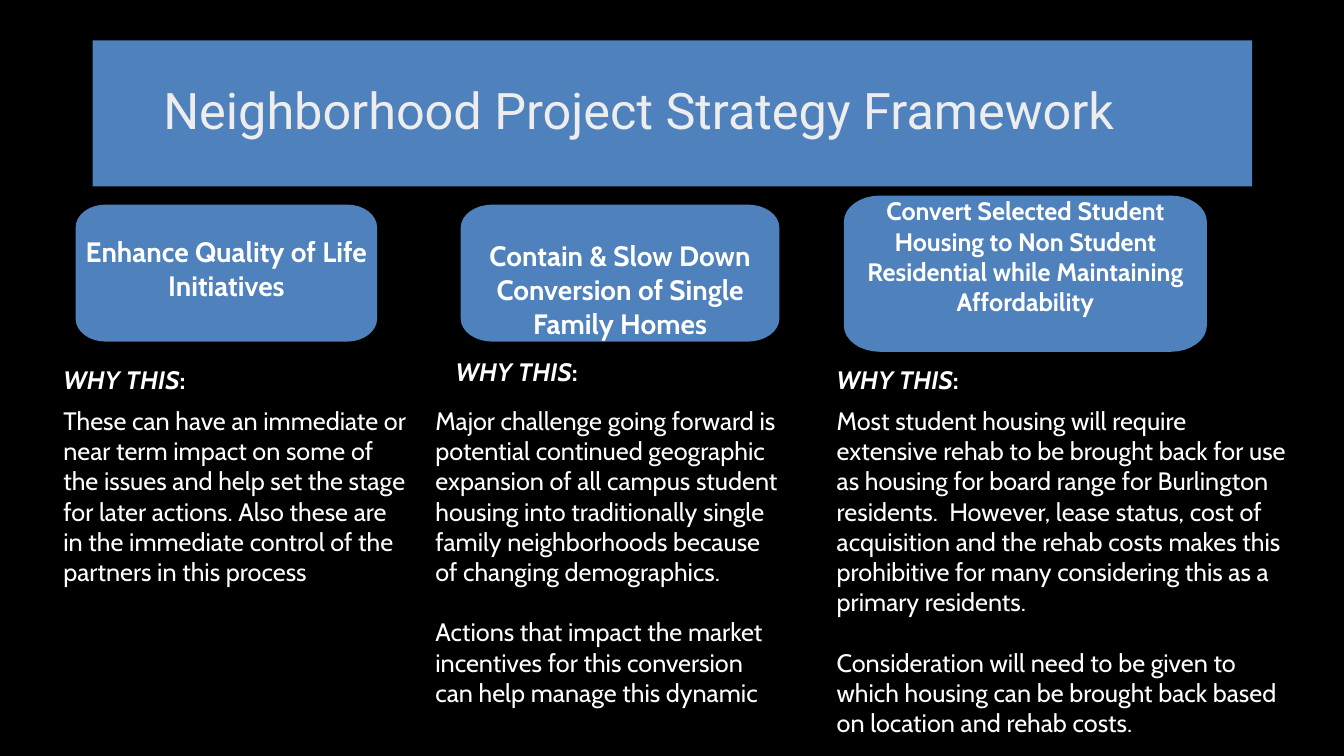
from dataclasses import dataclass
from math import cos, pi, sin

from pptx import Presentation
from pptx.dml.color import RGBColor
from pptx.enum.shapes import MSO_SHAPE
from pptx.enum.text import MSO_ANCHOR, PP_ALIGN
from pptx.shapes.autoshape import Shape
from pptx.slide import Slide
from pptx.text.text import TextFrame, _Paragraph
from pptx.util import Inches, Pt

BLUE, WHITE, BLACK, TITLE_GREY = "4F81BC", "FFFFFF", "000000", "EDEDED"
BODY_SIZE = 18
BODY_TOP = 3.97
PARAGRAPH_GAP = 21.6  # one body line


@dataclass
class Box:
    left: float
    top: float
    width: float
    height: float


@dataclass
class Strategy:
    heading: str
    heading_box: Box
    heading_size: float
    heading_inset: float
    why_box: Box
    reasons: list[str]
    reasons_box: Box


STRATEGIES = [
    Strategy(
        "Enhance Quality of Life Initiatives",
        Box(0.75, 2.03, 2.99, 1.36), 20, 0.3,
        Box(0.53, 3.57, 3.21, 0.4),
        ["These can have an immediate or near term impact on some of the issues and help "
         "set the stage for later actions. Also these are in the immediate control of the "
         "partners in this process"],
        Box(0.53, BODY_TOP, 3.61, 1.92),
    ),
    Strategy(
        "Contain & Slow Down Conversion of Single Family Homes",
        Box(4.57, 2.03, 3.16, 1.36), 20, 0.34,
        Box(4.42, 3.49, 2.81, 0.4),
        ["Major challenge going forward is potential continued geographic expansion of all "
         "campus student housing into traditionally single family neighborhoods because of "
         "changing demographics.",
         "Actions that impact the market incentives for this conversion can help manage "
         "this dynamic"],
        Box(4.22, BODY_TOP, 3.66, 3.13),
    ),
    Strategy(
        "Convert Selected Student Housing to Non Student Residential while Maintaining "
        "Affordability",
        Box(8.37, 1.94, 3.6, 1.55), 18, 0,
        Box(8.2, 3.57, 2.56, 0.4),
        ["Most student housing will require extensive rehab to be brought back for use as "
         "housing for board range for Burlington residents.  However, lease status, cost of "
         "acquisition and the rehab costs makes this prohibitive for many considering this "
         "as a primary residents.",
         "Consideration will need to be given to which housing can be brought back based on "
         "location and rehab costs."],
        Box(8.2, BODY_TOP, 4.72, 3.43),
    ),
]


def color(value: str) -> RGBColor:
    return RGBColor.from_string(value)


def emu(box: Box) -> tuple[Inches, Inches, Inches, Inches]:
    return Inches(box.left), Inches(box.top), Inches(box.width), Inches(box.height)


def add_run(paragraph: _Paragraph, text: str, size: float, font: str = "Cabin",
            fill: str = WHITE, bold: bool = False, italic: bool = False) -> None:
    run = paragraph.add_run()
    run.text = text
    run.font.name = font
    run.font.size = Pt(size)
    run.font.bold = bold
    run.font.italic = italic
    run.font.color.rgb = color(fill)


def style_panel(panel: Shape, anchor: MSO_ANCHOR, left: float = 0, top: float = 0) -> TextFrame:
    panel.shadow.inherit = False
    panel.fill.solid()
    panel.fill.fore_color.rgb = color(BLUE)
    panel.line.fill.background()
    frame = panel.text_frame
    frame.word_wrap = True
    frame.vertical_anchor = anchor
    frame.margin_left, frame.margin_top = Inches(left), Inches(top)
    frame.margin_right = frame.margin_bottom = 0
    return frame


def add_rounded_panel(slide: Slide, box: Box, steps: int = 8) -> Shape:
    """Draw a panel whose corners are quarter ellipses."""
    rx, ry = box.width / 10, box.height / 6
    right, bottom = box.left + box.width, box.top + box.height
    centers = [(right - rx, bottom - ry), (box.left + rx, bottom - ry),
               (box.left + rx, box.top + ry), (right - rx, box.top + ry)]
    points = []
    for quarter, (x, y) in enumerate(centers):
        for step in range(steps + 1):
            angle = (quarter + step / steps) * pi / 2
            points.append((Inches(x + rx * cos(angle)), Inches(y + ry * sin(angle))))
    outline = slide.shapes.build_freeform(*points[0])
    outline.add_line_segments(points[1:], close=True)
    return outline.convert_to_shape()


def add_text_frame(slide: Slide, box: Box) -> TextFrame:
    frame = slide.shapes.add_textbox(*emu(box)).text_frame
    frame.word_wrap = True
    return frame


def add_title(slide: Slide) -> None:
    banner = slide.shapes.add_shape(MSO_SHAPE.RECTANGLE, *emu(Box(0.92, 0.4, 11.5, 1.45)))
    title = style_panel(banner, MSO_ANCHOR.MIDDLE, left=0.7).paragraphs[0]
    title.alignment = PP_ALIGN.LEFT
    title.line_spacing = 0.9
    add_run(title, "Neighborhood Project Strategy Framework", 36, "Roboto", TITLE_GREY)


def add_strategy(slide: Slide, strategy: Strategy) -> None:
    # Heading panel
    panel = add_rounded_panel(slide, strategy.heading_box)
    heading = style_panel(panel, MSO_ANCHOR.TOP, top=strategy.heading_inset).paragraphs[0]
    heading.alignment = PP_ALIGN.CENTER
    add_run(heading, strategy.heading, strategy.heading_size, bold=True)

    # Label above the reasons
    why = add_text_frame(slide, strategy.why_box).paragraphs[0]
    add_run(why, "WHY THIS", BODY_SIZE, bold=True, italic=True)
    add_run(why, ":", BODY_SIZE, bold=True)

    # Reasons
    frame = add_text_frame(slide, strategy.reasons_box)
    for index, reason in enumerate(strategy.reasons):
        paragraph = frame.add_paragraph() if index else frame.paragraphs[0]
        if index:
            paragraph.space_before = Pt(PARAGRAPH_GAP)
        add_run(paragraph, reason, BODY_SIZE)


def main() -> None:
    presentation = Presentation()
    presentation.slide_width, presentation.slide_height = Inches(13.33), Inches(7.5)
    slide = presentation.slides.add_slide(presentation.slide_layouts[6])
    slide.background.fill.solid()
    slide.background.fill.fore_color.rgb = color(BLACK)

    add_title(slide)
    for strategy in STRATEGIES:
        add_strategy(slide, strategy)
    presentation.save("out.pptx")


if __name__ == "__main__":
    main()
